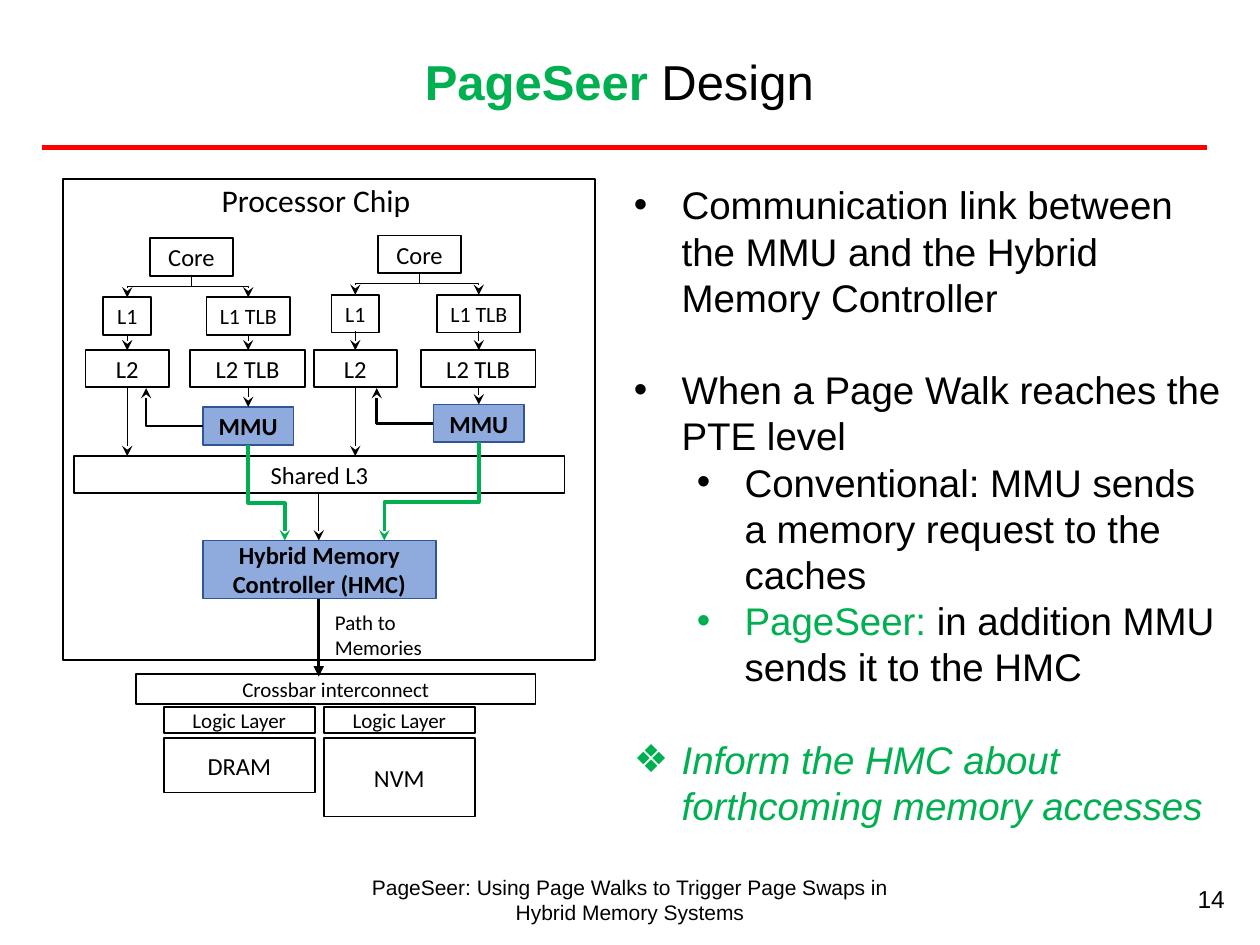
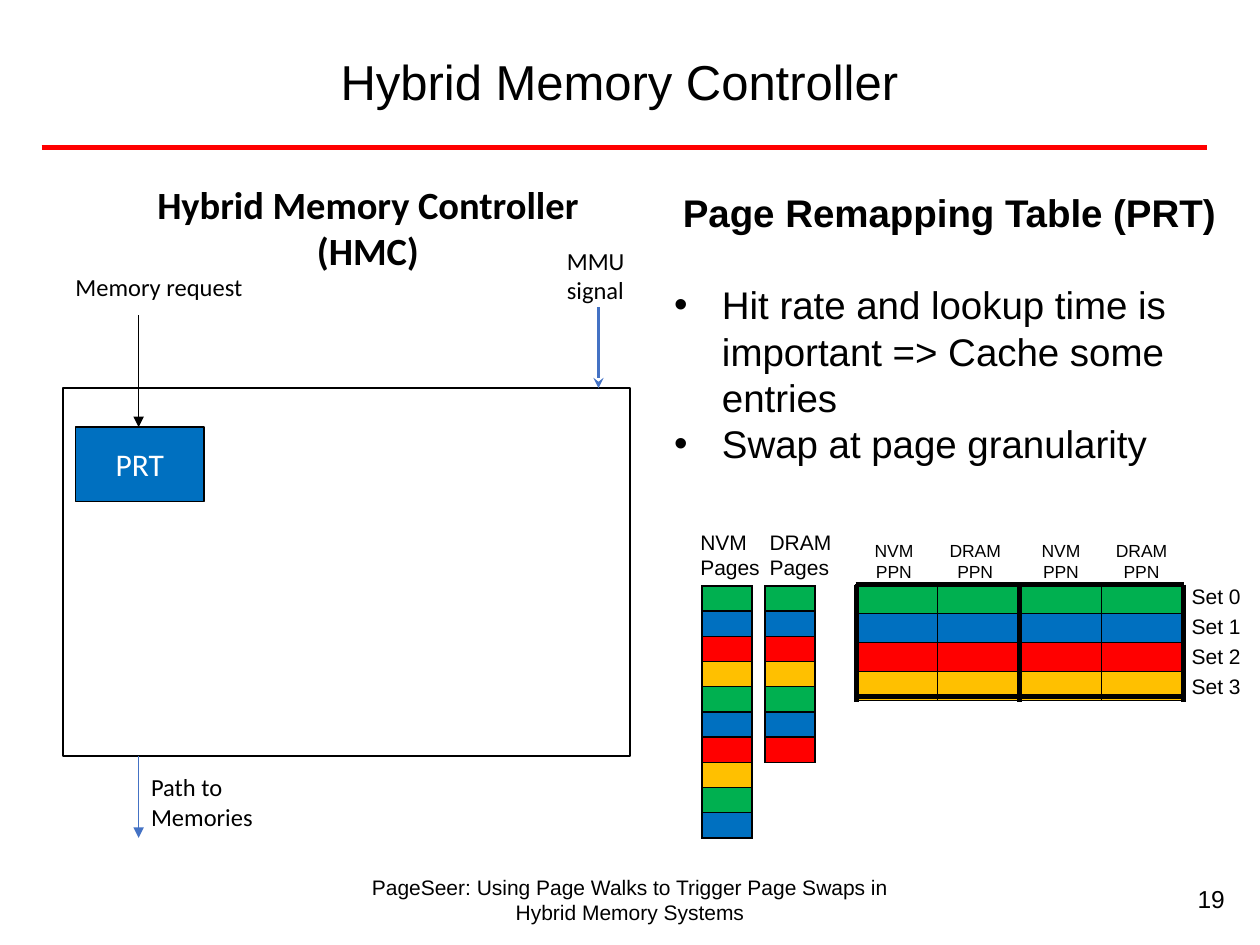
"""Build two slides on the PageSeer design and its memory controller."""
from dataclasses import dataclass

from pptx import Presentation
from pptx import util as u
from pptx.dml.color import RGBColor
from pptx.enum import shapes, text
from pptx.oxml import ns, xmlchemy as xc

ALIGN = {"l": text.PP_ALIGN.LEFT, "c": text.PP_ALIGN.CENTER, "r": text.PP_ALIGN.RIGHT}


@dataclass(frozen=True)
class Theme:
    """Hold colours, faces and type sizes."""
    black: str = "000000"
    white: str = "FFFFFF"
    green: str = "00B050"
    blue: str = "0070C0"
    red: str = "FF0000"
    gold: str = "FFC000"
    steel: str = "8FAADC"
    navy: str = "2F5597"
    arrow: str = "4472C4"
    sans: str = "Arial"
    label: str = "Calibri"
    title: float = 28
    body: float = 22
    head: float = 18
    node: float = 14
    cache: float = 12.5
    small: float = 12
    tiny: float = 10


T = Theme()
SETS = [T.green, T.blue, T.red, T.gold]


def rgb(code):
    """Turn a hex code into a colour."""
    return RGBColor.from_string(code)


def put(parent, tag, **attrs):
    """Append a drawing element with attributes."""
    node = xc.OxmlElement(tag)
    for key, value in attrs.items():
        node.set(key, str(value))
    parent.append(node)
    return node


def write(para, words, size=T.node, color=T.black, face=T.label, bold=False, italic=False, align=None):
    """Add formatted text to a paragraph."""
    run = para.add_run()
    run.text = words
    font = run.font
    font.size, font.name, font.bold, font.italic = u.Pt(size), face, bold, italic
    font.color.rgb = rgb(color)
    if align:
        para.alignment = ALIGN[align]


class Deck:
    """Hold the presentation, its style and the current slide."""

    def __init__(self):
        """Start an empty deck."""
        self.file = Presentation()
        self.file.slide_width, self.file.slide_height = u.Inches(10), u.Inches(7.5)
        self.slide = None

    def page(self, number, *runs):
        """Add a slide with title, rule, footer and number."""
        self.slide = self.file.slides.add_slide(self.file.slide_layouts[1])
        title = self.slide.shapes.title
        self.place(title, 0.5, 0.1, 8.83, 1.08)
        frame = title.text_frame
        frame.vertical_anchor = text.MSO_ANCHOR.MIDDLE
        for words, form in runs:
            write(frame.paragraphs[0], words, T.title, face=T.sans, align="c", **form)
        self.line(0.33, 1.17, 9.58, 1.17, T.red, 3.25)
        self.note("PageSeer: Using Page Walks to Trigger Page Swaps in Hybrid Memory Systems",
                  2.79, 6.89, 4.42, 0.74, size=T.small, face=T.sans, align="c")
        self.note(str(number), 7.49, 6.97, 2.33, 0.52, face=T.sans, align="r")

    def place(self, shape, x, y, w, h):
        """Move and size a shape."""
        shape.left, shape.top, shape.width, shape.height = map(u.Inches, (x, y, w, h))

    def body(self, x, y, w, h, items):
        """Fill the body placeholder with headings and bullets."""
        holder = self.slide.placeholders[1]
        self.place(holder, x, y, w, h)
        frame = holder.text_frame
        frame.auto_size = text.MSO_AUTO_SIZE.NONE
        for i, (mark, level, space, runs) in enumerate(items):
            para = frame.add_paragraph() if i else frame.paragraphs[0]
            para.level = level
            para.space_before = u.Pt(space)
            props = para._p.get_or_add_pPr()
            hang = 0.38 if mark else 0
            props.set("marL", str(u.Inches(hang + level * 0.5)))
            props.set("indent", str(-u.Inches(hang)))
            if mark:
                put(props, "a:buChar", char=mark)
            else:
                put(props, "a:buNone")
            for words, form in runs:
                write(para, words, T.body, face=T.sans, **form)

    def note(self, words, x, y, w, h, wrap=True, **form):
        """Add a text box."""
        box = self.slide.shapes.add_textbox(*map(u.Inches, (x, y, w, h)))
        box.text_frame.word_wrap = wrap
        write(box.text_frame.paragraphs[0], words, **form)

    def box(self, words, x, y, w, h, fill=T.white, edge=T.black, **form):
        """Add a bordered rectangle with a centred label."""
        rect = self.slide.shapes.add_shape(shapes.MSO_SHAPE.RECTANGLE, *map(u.Inches, (x, y, w, h)))
        rect.shadow.inherit = False
        rect.fill.solid()
        rect.fill.fore_color.rgb = rgb(fill)
        rect.line.color.rgb = rgb(edge)
        rect.line.width = u.Pt(1)
        frame = rect.text_frame
        frame.word_wrap = True
        frame.margin_left = frame.margin_right = u.Inches(0.05)
        frame.margin_top = frame.margin_bottom = 0
        frame.vertical_anchor = text.MSO_ANCHOR.MIDDLE
        if words:
            write(frame.paragraphs[0], words, align="c", **form)

    def line(self, x1, y1, x2, y2, color=T.black, width=0.5, tip=None, kind=shapes.MSO_CONNECTOR.STRAIGHT):
        """Add a connector, with an arrowhead if asked."""
        link = self.slide.shapes.add_connector(kind, *map(u.Inches, (x1, y1, x2, y2)))
        link.line.color.rgb = rgb(color)
        link.line.width = u.Pt(width)
        if tip:
            put(link.line._get_or_add_ln(), "a:tailEnd", type=tip)
        put(link._element.spPr, "a:effectLst")
        return link

    def elbow(self, x1, y1, x2, y2, bend=0.5, down=True, color=T.black, width=0.5):
        """Add a bent arrow that leaves downwards or to the left."""
        mx, my = (x1 + x2) / 2, (y1 + y2) / 2
        w, h = abs(x2 - x1) / 2, abs(y2 - y1) / 2
        if down:
            w, h = h, w
        link = self.line(mx - w, my - h, mx + w, my + h, color, width, "stealth",
                         shapes.MSO_CONNECTOR.ELBOW)
        props = link._element.spPr
        right = down and x2 > x1
        turn = 270 if right else 90 if down else 180
        props.xfrm.set("rot", str(turn * 60000))
        if right:
            props.xfrm.set("flipH", "1")
        geom = props.find(ns.qn("a:prstGeom"))
        for old in list(geom):
            geom.remove(old)
        put(put(geom, "a:avLst"), "a:gd", name="adj1", fmla=f"val {round(bend * 100000)}")

    def grid(self, x, y, w, h, rows, cols):
        """Add a table whose rows cycle through the set colours."""
        table = self.slide.shapes.add_table(
            rows, cols, *map(u.Inches, (x, y, w * cols, h * rows))).table
        table.first_row = table.horz_banding = False
        for col in table.columns:
            col.width = u.Inches(w)
        for i, row in enumerate(table.rows):
            row.height = u.Inches(h)
            for cell in row.cells:
                cell.margin_left = cell.margin_right = cell.margin_top = cell.margin_bottom = 0
                props = cell._tc.get_or_add_tcPr()
                for side in "LRTB":
                    edge = put(props, f"a:ln{side}", w=u.Pt(1))
                    put(put(edge, "a:solidFill"), "a:srgbClr", val=T.black)
                cell.fill.solid()
                cell.fill.fore_color.rgb = rgb(SETS[i % len(SETS)])
                put(cell.text_frame.paragraphs[0]._p, "a:endParaRPr", sz=800)


def core(deck, x, tlb, top, port):
    """Draw one core with its caches, TLBs, MMU and links."""
    mid, walk, mmu = x + 0.33, tlb + 0.46, top + 1.34
    deck.box("Core", x + 0.51, top, 0.66, 0.3)
    deck.box("L1", x + 0.14, top + 0.47, 0.38, 0.3, size=T.cache)
    deck.box("L1 TLB", tlb + 0.13, top + 0.47, 0.66, 0.3, size=T.cache)
    deck.box("L2", x, 2.78, 0.66, 0.29)
    deck.box("L2 TLB", tlb, 2.78, 0.91, 0.29)
    deck.box("MMU", tlb + 0.1, mmu, 0.72, 0.3, T.steel, T.navy, bold=True)
    for end in (mid, walk):
        deck.elbow(x + 0.84, top + 0.29, end, top + 0.47)
        deck.line(end, top + 0.76, end, 2.78, tip="stealth")
    deck.line(mid, 3.07, mid, 3.62, tip="stealth")
    deck.line(walk, 3.07, walk, mmu, tip="stealth")
    deck.elbow(tlb + 0.1, mmu + 0.15, tlb - 0.35, 3.08, 1, down=False, width=1.5)
    deck.elbow(walk, mmu + 0.3, port, 4.29, 0.61, color=T.green, width=2)


def design(deck):
    """Build the design slide."""
    green = {"color": T.green}
    deck.page(14, ("PageSeer", {"bold": True, **green}), (" Design", {}))
    deck.box("", 0.5, 1.42, 4.22, 3.82)
    deck.note("Processor Chip", 1.66, 1.39, 2.75, 0.4, size=T.head)
    deck.box("Shared L3", 0.59, 3.62, 3.89, 0.29)
    deck.box("Hybrid Memory Controller (HMC)", 1.61, 4.29, 1.85, 0.46, T.steel, T.navy, bold=True)
    core(deck, 0.68, 1.51, 1.89, 2.26)
    core(deck, 2.49, 3.34, 1.87, 3.05)
    deck.line(2.53, 3.92, 2.53, 4.29, tip="stealth")
    deck.note("Path to Memories", 2.56, 4.79, 1.2, 0.5, size=T.small)
    deck.box("Crossbar interconnect", 1.08, 5.35, 3.17, 0.24, size=T.small)
    deck.line(2.53, 4.75, 2.53, 5.37, width=1.5, tip="triangle")
    for name, x, h in (("DRAM", 1.3, 0.43), ("NVM", 2.57, 0.62)):
        deck.box("Logic Layer", x, 5.61, 1.2, 0.21, size=T.small)
        deck.box(name, x, 5.86, 1.2, h)
    gap = T.body * 1.2
    deck.body(4.93, 1.39, 4.9, 5.28, [
        ("•", 0, 0, [("Communication link between the MMU and the Hybrid Memory Controller", {})]),
        ("•", 0, gap, [("When a Page Walk reaches the PTE level", {})]),
        ("•", 1, 0, [("Conventional: MMU sends a memory request to the caches", {})]),
        ("•", 1, 0, [("PageSeer:", green), (" in addition MMU sends it to the HMC", {})]),
        ("❖", 0, gap, [("Inform the HMC about forthcoming memory accesses", {"italic": True, **green})]),
    ])


def control(deck):
    """Build the memory controller slide."""
    deck.page(19, ("Hybrid Memory Controller", {}))
    deck.box("", 0.5, 3.08, 4.5, 2.92)
    deck.note("Hybrid Memory Controller (HMC)", 0.93, 1.39, 3.98, 0.84, size=T.body, bold=True, align="c")
    deck.note("Memory request", 0.5, 2.11, 1.69, 0.34)
    deck.note("MMU signal", 4.4, 1.9, 0.69, 0.57)
    deck.note("Path to Memories", 1.1, 6.08, 1.05, 0.57)
    deck.box("PRT", 0.6, 3.39, 1.02, 0.59, T.blue, size=T.head, color=T.white)
    deck.line(1.1, 2.5, 1.1, 3.39, tip="triangle")
    deck.line(1.1, 6, 1.1, 6.65, T.arrow, 1, "triangle")
    deck.line(4.75, 2.44, 4.75, 3.08, T.arrow, 1.5, "stealth")
    deck.body(5.25, 1.45, 4.57, 2.32, [
        ("", 0, 0, [("Page Remapping Table (PRT)", {"bold": True, "align": "c"})]),
        ("•", 0, T.body * 1.2, [("Hit rate and lookup time is important => Cache some entries", {})]),
        ("•", 0, 0, [("Swap at page granularity", {})]),
    ])
    for name, x, w, left, rows in (("NVM", 5.46, 0.7, 5.57, 10), ("DRAM", 6.01, 0.76, 6.07, 7)):
        deck.note(f"{name} Pages", x, 4.15, w, 0.5, size=T.small, face=T.sans)
        deck.grid(left, 4.65, 0.4, 0.2, rows, 1)
    for name, x, w in (("NVM", 6.76, 0.67), ("DRAM", 7.36, 0.76), ("NVM", 8.11, 0.62), ("DRAM", 8.68, 0.76)):
        deck.note(f"{name} PPN", x, 4.24, w, 0.44, size=T.tiny, face=T.sans, align="c")
    deck.grid(6.79, 4.64, 0.65, 0.23, 4, 4)
    for x in (6.8, 8.09, 9.39):
        deck.line(x, 4.64, x, 5.57, width=2.75)
    for y in (4.64, 5.53):
        deck.line(6.79, y, 9.4, y, width=2.75)
    for i in range(4):
        deck.note(f"Set {i}", 9.36, 4.58 + 0.24 * i, 0.64, 0.3, wrap=False, size=T.small, face=T.sans)


def main():
    """Build and save the deck."""
    deck = Deck()
    design(deck)
    control(deck)
    deck.file.save("out.pptx")


if __name__ == "__main__":
    main()
